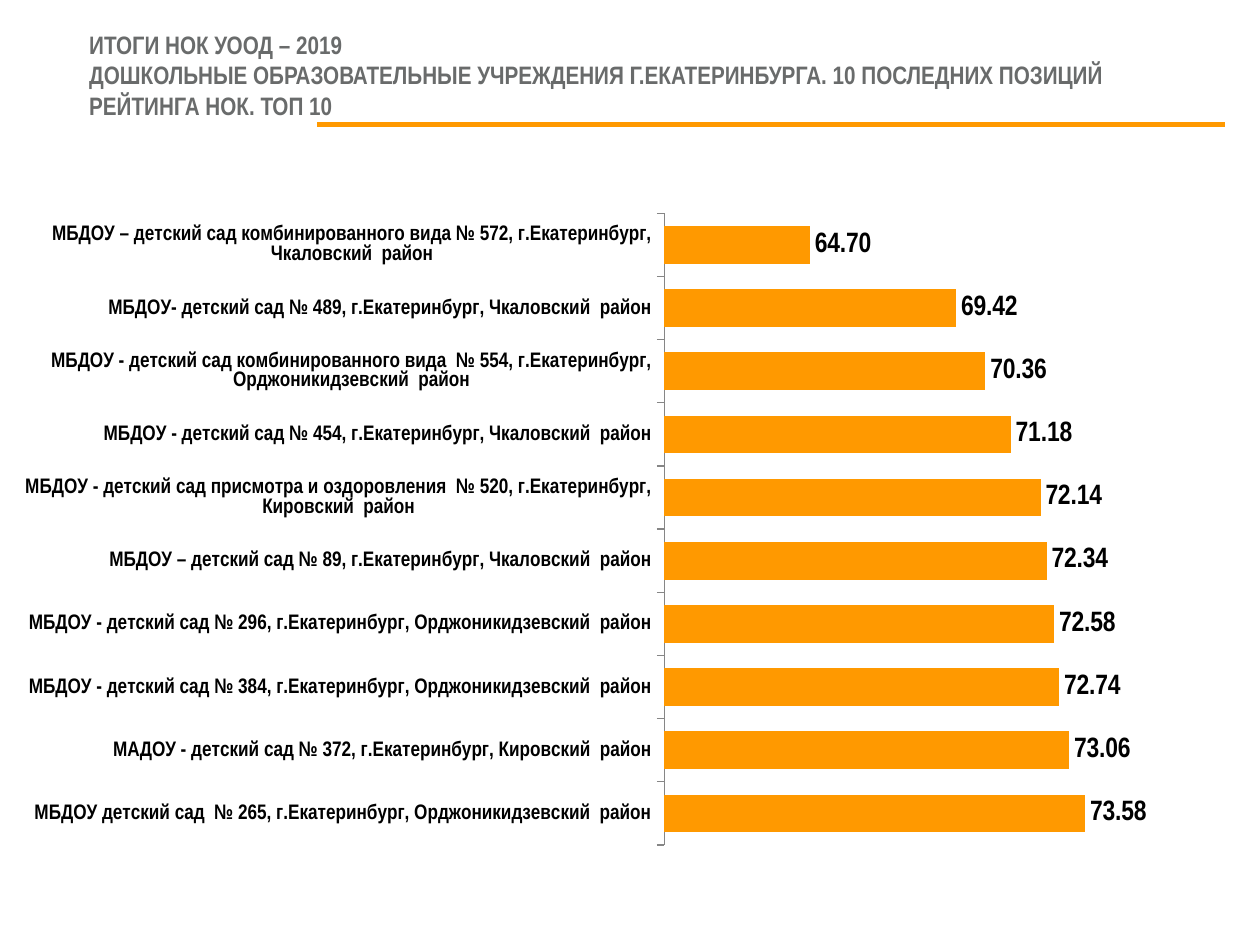
from lxml import etree
from pptx import Presentation
from pptx.chart.data import CategoryChartData
from pptx.dml.color import RGBColor
from pptx.enum.chart import XL_CHART_TYPE as ChartType, XL_LABEL_POSITION as LabelPosition
from pptx.enum.chart import XL_TICK_MARK as TickMark
from pptx.enum.shapes import MSO_CONNECTOR as Connector
from pptx.enum.text import MSO_ANCHOR as Anchor
from pptx.oxml import parse_xml
from pptx.oxml.ns import nsdecls, qn
from pptx.util import Inches, Pt

FONT = "Arial Narrow"
ORANGE = RGBColor(0xFF, 0x99, 0x00)
GREY = RGBColor(0x69, 0x6B, 0x6B)
AXIS_GREY = RGBColor(0x86, 0x86, 0x86)
BLACK = RGBColor(0, 0, 0)

TITLE = [
    "ИТОГИ НОК УООД – 2019",
    "ДОШКОЛЬНЫЕ ОБРАЗОВАТЕЛЬНЫЕ УЧРЕЖДЕНИЯ Г.ЕКАТЕРИНБУРГА. "
    "10 ПОСЛЕДНИХ ПОЗИЦИЙ РЕЙТИНГА НОК. ТОП 10",
]
# Kindergartens from the bottom bar to the top one
RATING = [
    ("МБДОУ детский сад  № 265, г.Екатеринбург, Орджоникидзевский  район", 73.58),
    ("МАДОУ - детский сад № 372, г.Екатеринбург, Кировский  район", 73.06),
    ("МБДОУ - детский сад № 384, г.Екатеринбург, Орджоникидзевский  район", 72.74),
    ("МБДОУ - детский сад № 296, г.Екатеринбург, Орджоникидзевский  район", 72.58),
    ("МБДОУ – детский сад № 89, г.Екатеринбург, Чкаловский  район", 72.34),
    ("МБДОУ - детский сад присмотра и оздоровления  № 520, г.Екатеринбург, "
     "Кировский  район", 72.14),
    ("МБДОУ - детский сад № 454, г.Екатеринбург, Чкаловский  район", 71.18),
    ("МБДОУ - детский сад комбинированного вида  № 554, г.Екатеринбург, "
     "Орджоникидзевский  район", 70.36),
    ("МБДОУ- детский сад № 489, г.Екатеринбург, Чкаловский  район", 69.42),
    ("МБДОУ – детский сад комбинированного вида № 572, г.Екатеринбург, "
     "Чкаловский  район", 64.70),
]
PLOT_AREA = {"x": 0.54, "y": 0.055, "w": 0.395, "h": 0.91}


def style(font, size, color, bold=True):
    font.name, font.size, font.bold = FONT, Pt(size), bold
    font.color.rgb = color


def add_title(page):
    box = page.shapes.add_textbox(Inches(0.61), Inches(0.43), Inches(9), Inches(0.57))
    frame = box.text_frame
    frame.word_wrap = True
    frame.vertical_anchor = Anchor.MIDDLE
    frame.margin_bottom = Inches(0.29)  # lifts the heading above the rule
    para = frame.paragraphs[0]
    for index, line in enumerate(TITLE):
        if index:
            para.add_line_break()
        span = para.add_run()
        span.text = line
        style(span.font, 14.4, GREY)


def add_rule(page):
    rule = page.shapes.add_connector(
        Connector.STRAIGHT, Inches(2.52), Inches(0.99), Inches(9.72), Inches(0.99))
    rule.line.color.rgb = ORANGE
    rule.line.width = Pt(3)
    etree.SubElement(rule._element.spPr, qn("a:effectLst"))


def add_rating_chart(page):
    data = CategoryChartData()
    data.categories = [name for name, _ in RATING]
    data.add_series("Series 1", [score for _, score in RATING])
    chart = page.shapes.add_chart(
        ChartType.BAR_CLUSTERED, Inches(0.2), Inches(1.39),
        Inches(9.37), Inches(5.51), data).chart
    chart.has_legend = False
    chart.has_title = False
    style(chart.font, 14, BLACK, bold=False)

    # Axes
    names = chart.category_axis
    names.major_tick_mark = TickMark.OUTSIDE
    names.has_major_gridlines = False
    names.format.line.color.rgb = AXIS_GREY
    style(names.tick_labels.font, 12, BLACK)
    scores = chart.value_axis
    scores.minimum_scale, scores.maximum_scale, scores.major_unit = 60, 75, 10
    scores.has_major_gridlines = False
    scores.visible = False

    # Bars and their values
    plot = chart.plots[0]
    plot.gap_width = 68
    plot.vary_by_categories = False
    fill = plot.series[0].format.fill
    fill.solid()
    fill.fore_color.rgb = ORANGE
    plot.has_data_labels = True
    labels = plot.data_labels
    labels.show_value = True
    labels.number_format = "#,##0.00"
    labels.number_format_is_linked = False
    labels.position = LabelPosition.OUTSIDE_END
    style(labels.font, 16, BLACK)

    # Fixed inner plot area
    area = chart._chartSpace.chart.plotArea
    for old in area.findall(qn("c:layout")):
        area.remove(old)
    sizes = "".join(f'<c:{key} val="{value}"/>' for key, value in PLOT_AREA.items())
    area.insert(0, parse_xml(
        f'<c:layout {nsdecls("c")}><c:manualLayout><c:layoutTarget val="inner"/>'
        f'<c:xMode val="edge"/><c:yMode val="edge"/>{sizes}</c:manualLayout></c:layout>'))


def main():
    deck = Presentation()
    deck.slide_width, deck.slide_height = Inches(10), Inches(7.5)
    page = deck.slides.add_slide(deck.slide_layouts[6])
    add_title(page)
    add_rule(page)
    add_rating_chart(page)
    deck.save("out.pptx")


if __name__ == "__main__":
    main()
